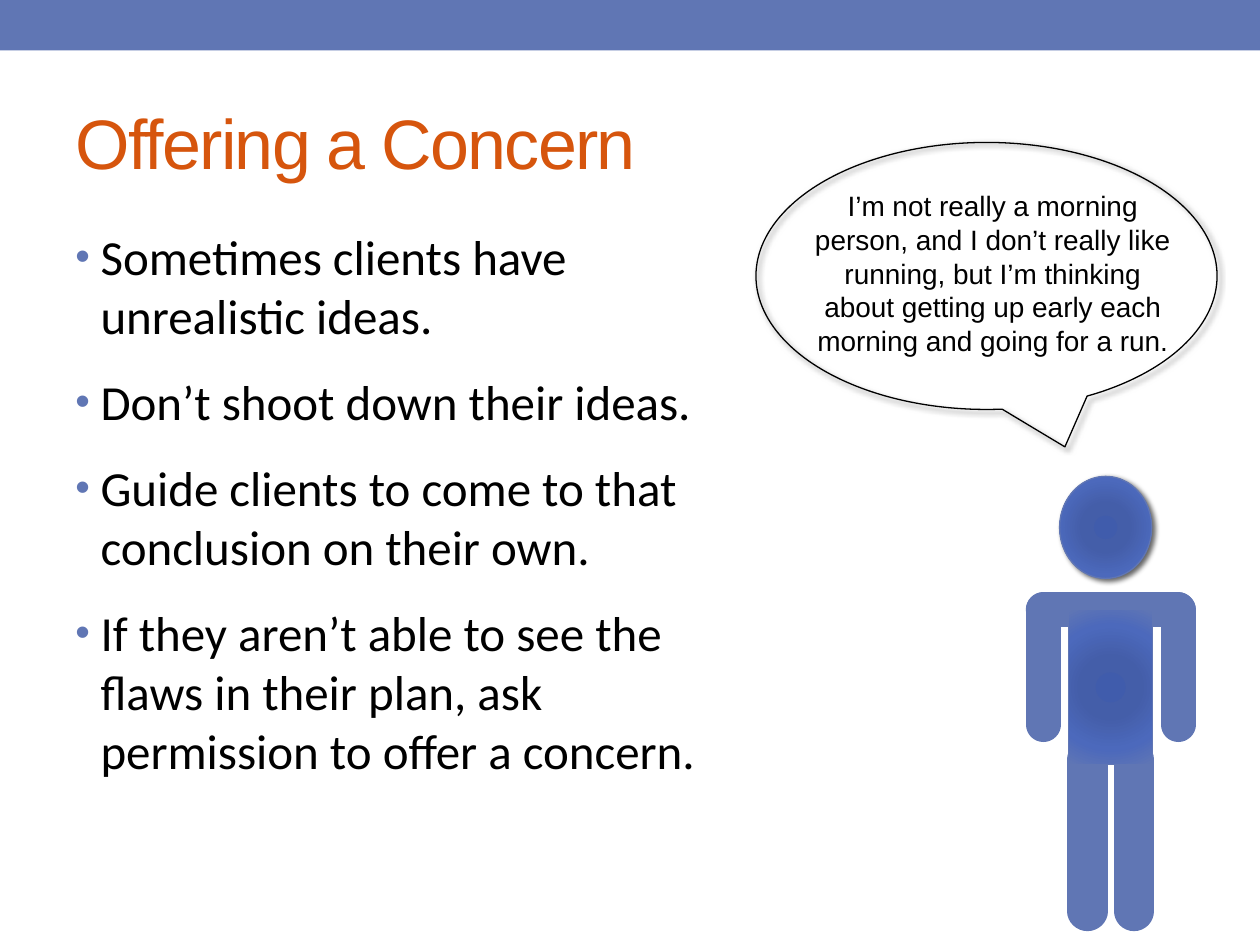
from dataclasses import dataclass
from typing import NamedTuple

from lxml import etree
from pptx import Presentation
from pptx.dml.color import RGBColor
from pptx.enum.shapes import MSO_CONNECTOR, MSO_SHAPE
from pptx.enum.text import MSO_ANCHOR, PP_ALIGN
from pptx.oxml import parse_xml
from pptx.oxml.ns import nsdecls, qn
from pptx.util import Pt

RECT, OVAL = MSO_SHAPE.RECTANGLE, MSO_SHAPE.OVAL
CALLOUT = MSO_SHAPE.OVAL_CALLOUT
STRAIGHT = MSO_CONNECTOR.STRAIGHT
LEFT, CENTER = PP_ALIGN.LEFT, PP_ALIGN.CENTER
MIDDLE = MSO_ANCHOR.MIDDLE


@dataclass(frozen=True)
class Theme:
    accent: str = "6076B4"
    title: str = "D6550D"
    ink: str = "000000"
    gradient: tuple = ((0, "405CAC"), (34, "445EA9"), (70, "4C69BC"), (100, "6076B4"))
    heading_font: str = "Arial"
    body_font: str = "Calibri"
    title_size: float = 40
    body_size: float = 28
    speech_size: float = 16
    outline: float = 0.75


class Box(NamedTuple):
    x: float
    y: float
    w: float
    h: float

    def points(self) -> list:
        return [Pt(v) for v in self]


class Limb(NamedTuple):
    x1: float
    y1: float
    x2: float
    y2: float
    width: float


THEME = Theme()
BULLETS = (
    "Sometimes clients have unrealistic ideas.",
    "Don’t shoot down their ideas.",
    "Guide clients to come to that conclusion on their own.",
    "If they aren’t able to see the flaws in their plan, ask permission to offer a concern.",
)
SPEECH = ("I’m not really a morning person, and I don’t really like running, "
          "but I’m thinking about getting up early each morning and going for a run.")

HIP, FOOT = 434.2, 520.6
SHOULDER, HAND = 348.5, 414
ARM_L, ARM_R = 596.2, 673.2
LEG_WIDTH, ARM_WIDTH = 23, 20
LEGS = [Limb(x, HIP, x, FOOT, LEG_WIDTH) for x in (648, 621.4)]
SHOULDERS = Limb(ARM_L, SHOULDER, ARM_R, SHOULDER, ARM_WIDTH)
ARMS = [Limb(x, SHOULDER, x, HAND, ARM_WIDTH) for x in (ARM_R, ARM_L)]
HEAD = Box(605.5, 272.2, 52.6, 58.3)
TORSO = Box(610.6, SHOULDER, 48.2, 88.6)


def rgb(color: str) -> RGBColor:
    return RGBColor.from_string(color)


def style_paragraph(p, font: str, size: float, color: str, align=LEFT) -> None:
    p.alignment = align
    p.font.name = font
    p.font.size = Pt(size)
    p.font.color.rgb = rgb(color)


def add_bullet(p) -> None:
    pPr = p._p.get_or_add_pPr()
    pPr.set("marL", str(Pt(14.4)))
    pPr.set("indent", str(-Pt(14.4)))
    p.space_before = Pt(0.2 * THEME.body_size)
    p.space_after = Pt(10)
    marks = (
        f'<a:buClr {nsdecls("a")}><a:srgbClr val="{THEME.accent}"/></a:buClr>',
        f'<a:buSzPct {nsdecls("a")} val="85000"/>',
        f'<a:buFont {nsdecls("a")} typeface="Arial"/>',
        f'<a:buChar {nsdecls("a")} char="•"/>',
    )
    first = pPr.index(pPr.find(qn("a:spcAft"))) + 1
    for i, mark in enumerate(marks):
        pPr.insert(first + i, parse_xml(mark))


def add_drop_shadow(s) -> None:
    effects = s._element.spPr.find(qn("a:effectLst"))
    effects.append(parse_xml(
        f'<a:outerShdw {nsdecls("a")} blurRad="{Pt(3)}" dist="{Pt(2)}" dir="2700000" '
        f'algn="tl" rotWithShape="0"><a:srgbClr val="{THEME.ink}">'
        '<a:alpha val="60000"/></a:srgbClr></a:outerShdw>'))


def add_outlined(shapes, kind, box: Box, line: str):
    """Add an unfilled, shadowless shape with a thin outline."""
    s = shapes.add_shape(kind, *box.points())
    s.fill.background()
    s.line.color.rgb = rgb(line)
    s.line.width = Pt(THEME.outline)
    s.shadow.inherit = False
    return s


def add_body_part(shapes, kind, box: Box):
    """Add a shape with the theme's circular gradient."""
    s = add_outlined(shapes, kind, box, THEME.accent)
    stops = "".join(f'<a:gs pos="{pos * 1000}"><a:srgbClr val="{color}"/></a:gs>'
                    for pos, color in THEME.gradient)
    spPr = s._element.spPr
    spPr.replace(spPr.find(qn("a:noFill")), parse_xml(
        f'<a:gradFill {nsdecls("a")} rotWithShape="1"><a:gsLst>{stops}</a:gsLst>'
        '<a:path path="circle"><a:fillToRect l="100000" t="100000" r="100000" '
        'b="100000"/></a:path></a:gradFill>'))
    return s


def add_limb(shapes, limb: Limb) -> None:
    """Add a thick line with round ends."""
    s = shapes.add_connector(STRAIGHT, *[Pt(v) for v in limb[:4]])
    s.line.color.rgb = rgb(THEME.accent)
    s.line.width = Pt(limb.width)
    s.line._get_or_add_ln().set("cap", "rnd")
    etree.SubElement(s._element.spPr, qn("a:effectLst"))


def add_text_frame(shapes, box: Box):
    tf = shapes.add_textbox(*box.points()).text_frame
    tf.word_wrap = True
    return tf


def add_title(slide) -> None:
    s = slide.shapes.title
    s.left, s.top, s.width, s.height = Box(36, 41.8, 648, 77.8).points()
    s.text_frame.vertical_anchor = MIDDLE
    p = s.text_frame.paragraphs[0]
    r = p.add_run()
    r.text = "Offering a Concern"
    style_paragraph(p, THEME.heading_font, THEME.title_size, THEME.title)
    r._r.get_or_add_rPr().set("spc", "-100")


def add_bullets(shapes) -> None:
    tf = add_text_frame(shapes, Box(36, 126, 396, 383.8))
    tf.text = "\n".join(BULLETS)
    for p in tf.paragraphs:
        style_paragraph(p, THEME.body_font, THEME.body_size, THEME.ink)
        add_bullet(p)


def add_speech(shapes) -> None:
    s = add_outlined(shapes, CALLOUT, Box(432, 81.4, 263.5, 152.6), THEME.ink)
    s.adjustments[0], s.adjustments[1] = 0.17, 0.64
    add_drop_shadow(s)
    tf = add_text_frame(shapes, Box(455, 104.4, 224.6, 104.4))
    tf.text = SPEECH
    style_paragraph(tf.paragraphs[0], THEME.heading_font, THEME.speech_size,
                    THEME.ink, CENTER)


def add_person(shapes) -> None:
    person = shapes.add_group_shape().shapes
    for leg in LEGS:
        add_limb(person, leg)
    add_drop_shadow(add_body_part(person, OVAL, HEAD))
    add_limb(person, SHOULDERS)
    add_body_part(person, RECT, TORSO)
    for arm in ARMS:
        add_limb(person, arm)


def main() -> None:
    prs = Presentation()
    prs.slide_width, prs.slide_height = Pt(720), Pt(540)
    slide = prs.slides.add_slide(prs.slide_layouts[5])
    shapes = slide.shapes

    bar = shapes.add_shape(RECT, *Box(0, 0, 720, 28.8).points())
    bar.fill.solid()
    bar.fill.fore_color.rgb = rgb(THEME.accent)
    bar.line.fill.background()
    bar.shadow.inherit = False

    add_title(slide)
    add_bullets(shapes)
    add_speech(shapes)
    add_person(shapes)
    prs.save("out.pptx")


if __name__ == "__main__":
    main()
